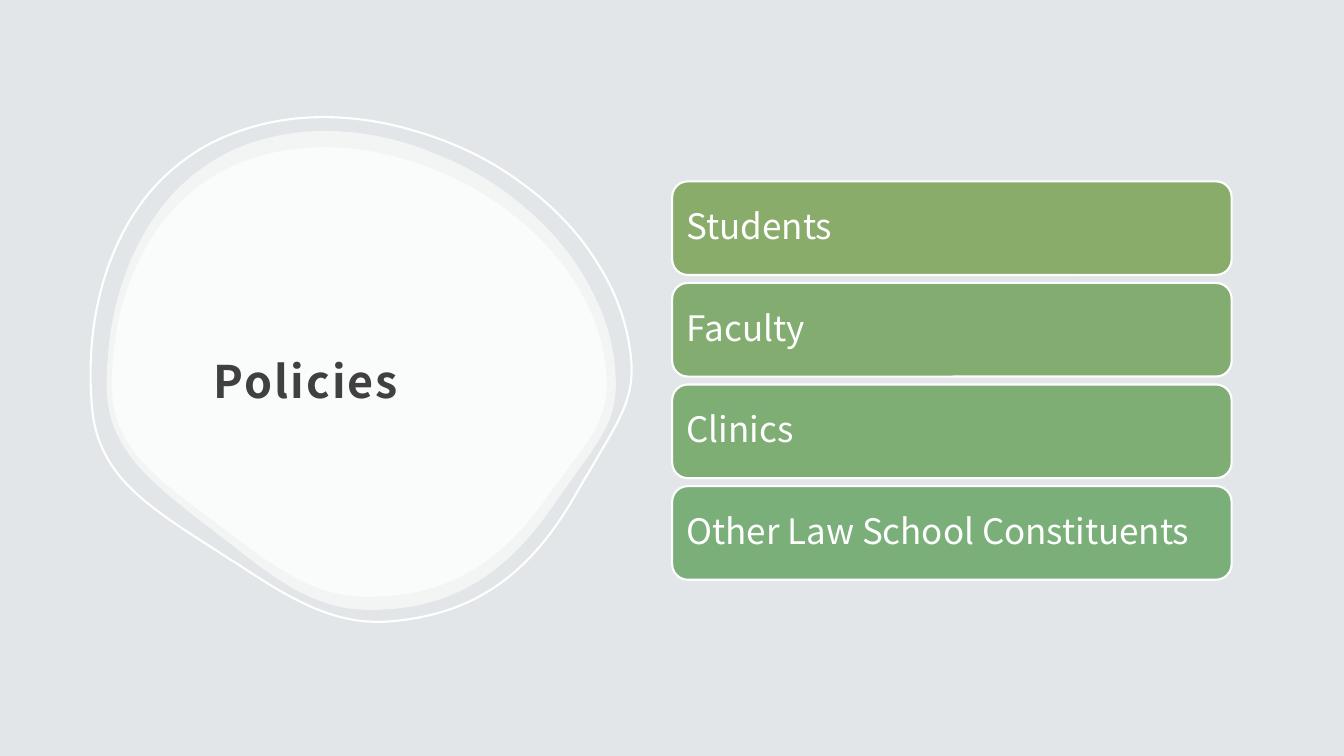
from lxml import etree
from pptx import Presentation
from pptx.dml.color import RGBColor
from pptx.enum import shapes, text
from pptx.oxml.ns import qn
from pptx.util import Cm, Pt

FONT = "Noto Sans CJK JP"
WHITE = RGBColor(0xFF, 0xFF, 0xFF)
DARK = RGBColor(0x40, 0x40, 0x40)
BACKGROUND = RGBColor(0xE2, 0xE6, 0xE8)

TITLE = "Policies"
GROUPS = [
    ("Students", RGBColor(0x89, 0xAC, 0x6B)),
    ("Faculty", RGBColor(0x83, 0xAD, 0x70)),
    ("Clinics", RGBColor(0x7F, 0xAE, 0x74)),
    ("Other Law School Constituents", RGBColor(0x7B, 0xAF, 0x79)),
]

# Pebble outline: a start point, then cubic curves (two controls, end point)
PEBBLE_START = (322, 130)
PEBBLE_CURVES = [
    ((289, 130), (258, 137), (231, 149)),
    ((206, 161), (183, 178), (165, 200)),
    ((127, 246), (106, 310), (106, 382)),
    ((106, 410), (114, 433), (132, 456)),
    ((151, 480), (180, 502), (210, 525)),
    ((215, 529), (221, 534), (227, 538)),
    ((278, 579), (316, 605), (367, 605)),
    ((445, 605), (501, 573), (552, 497)),
    ((559, 487), (566, 478), (572, 469)),
    ((598, 433), (611, 414), (611, 382)),
    ((611, 350), (603, 318), (587, 288)),
    ((572, 258), (550, 231), (522, 207)),
    ((495, 183), (462, 164), (428, 151)),
    ((393, 137), (357, 130), (322, 130)),
]

# Left, top, width, height in cm
OUTER_PEBBLE = (2.69, 3.3, 12.83, 12.07)
INNER_PEBBLE = (2.82, 3.71, 12.47, 11.33)
RING = (2.26, 2.87, 13.64, 12.83)
TITLE_BOX = (5.08, 5.28, 9.19, 8.15)
BAR_LEFT, BAR_TOP, BAR_WIDTH, BAR_HEIGHT = 16.94, 4.57, 14.1, 2.36
BAR_PITCH = 2.56


def place(sp, box):
    sp.left, sp.top, sp.width, sp.height = (Cm(v) for v in box)


def curve_segments(sp):
    """Turn each three line segments of a freeform into one cubic curve."""
    outline = next(sp._element.iter(qn("a:path")))
    lines = outline.findall(qn("a:lnTo"))
    for i in range(0, len(lines), 3):
        curve = etree.Element(qn("a:cubicBezTo"))
        lines[i].addprevious(curve)
        for line in lines[i:i + 3]:
            curve.append(line[0])
            outline.remove(line)


def add_pebble(slide, box):
    builder = slide.shapes.build_freeform(*PEBBLE_START, scale=Cm(0.0254))
    points = [point for curve in PEBBLE_CURVES for point in curve]
    builder.add_line_segments(points, close=True)
    sp = builder.convert_to_shape()
    curve_segments(sp)
    place(sp, box)
    sp.shadow.inherit = False
    return sp


def add_filled_pebble(slide, box):
    sp = add_pebble(slide, box)
    sp.line.fill.background()
    sp.fill.solid()
    sp.fill.fore_color.rgb = WHITE
    color = sp._element.spPr.find(qn("a:solidFill")).find(qn("a:srgbClr"))
    etree.SubElement(color, qn("a:alpha")).set("val", "60000")


def add_ring(slide):
    sp = add_pebble(slide, RING)
    sp.fill.background()
    sp.line.color.rgb = WHITE
    sp.line.width = Pt(1.5)
    sp.rotation = -5


def write(sp, words, size, color, spacing, margin):
    """Fill a shape with one left-aligned, vertically centred line."""
    tf = sp.text_frame
    tf.word_wrap = True
    tf.auto_size = text.MSO_AUTO_SIZE.NONE
    tf.vertical_anchor = text.MSO_ANCHOR.MIDDLE
    tf.margin_left = tf.margin_right = tf.margin_top = Cm(margin)
    tf.margin_bottom = Cm(0.25)
    p = tf.paragraphs[0]
    p.text = words
    p.alignment = text.PP_ALIGN.LEFT
    p.line_spacing = spacing
    p.font.name = FONT
    p.font.size = Pt(size)
    p.font.color.rgb = color
    return p


def add_title(slide):
    title = slide.shapes.title
    place(title, TITLE_BOX)
    p = write(title, TITLE, 32, DARK, 1.3, 0.3)
    p.font.bold = True
    p.runs[0]._r.get_or_add_rPr().set("spc", "150")
    # Bring the title in front of the pebbles
    slide.shapes._spTree.append(title._element)


def add_bars(slide):
    for i, (name, color) in enumerate(GROUPS):
        sp = slide.shapes.add_shape(
            shapes.MSO_SHAPE.ROUNDED_RECTANGLE, Cm(BAR_LEFT),
            Cm(BAR_TOP + i * BAR_PITCH), Cm(BAR_WIDTH), Cm(BAR_HEIGHT))
        sp.shadow.inherit = False
        sp.fill.solid()
        sp.fill.fore_color.rgb = color
        sp.line.color.rgb = WHITE
        sp.line.width = Pt(1.5)
        write(sp, name, 25, WHITE, 0.9, 0.25)


def main():
    prs = Presentation()
    prs.slide_width, prs.slide_height = Cm(33.87), Cm(19.05)
    slide = prs.slides.add_slide(prs.slide_layouts[5])
    slide.background.fill.solid()
    slide.background.fill.fore_color.rgb = BACKGROUND
    for box in (OUTER_PEBBLE, INNER_PEBBLE):
        add_filled_pebble(slide, box)
    add_ring(slide)
    add_title(slide)
    add_bars(slide)
    prs.save("out.pptx")


if __name__ == "__main__":
    main()
